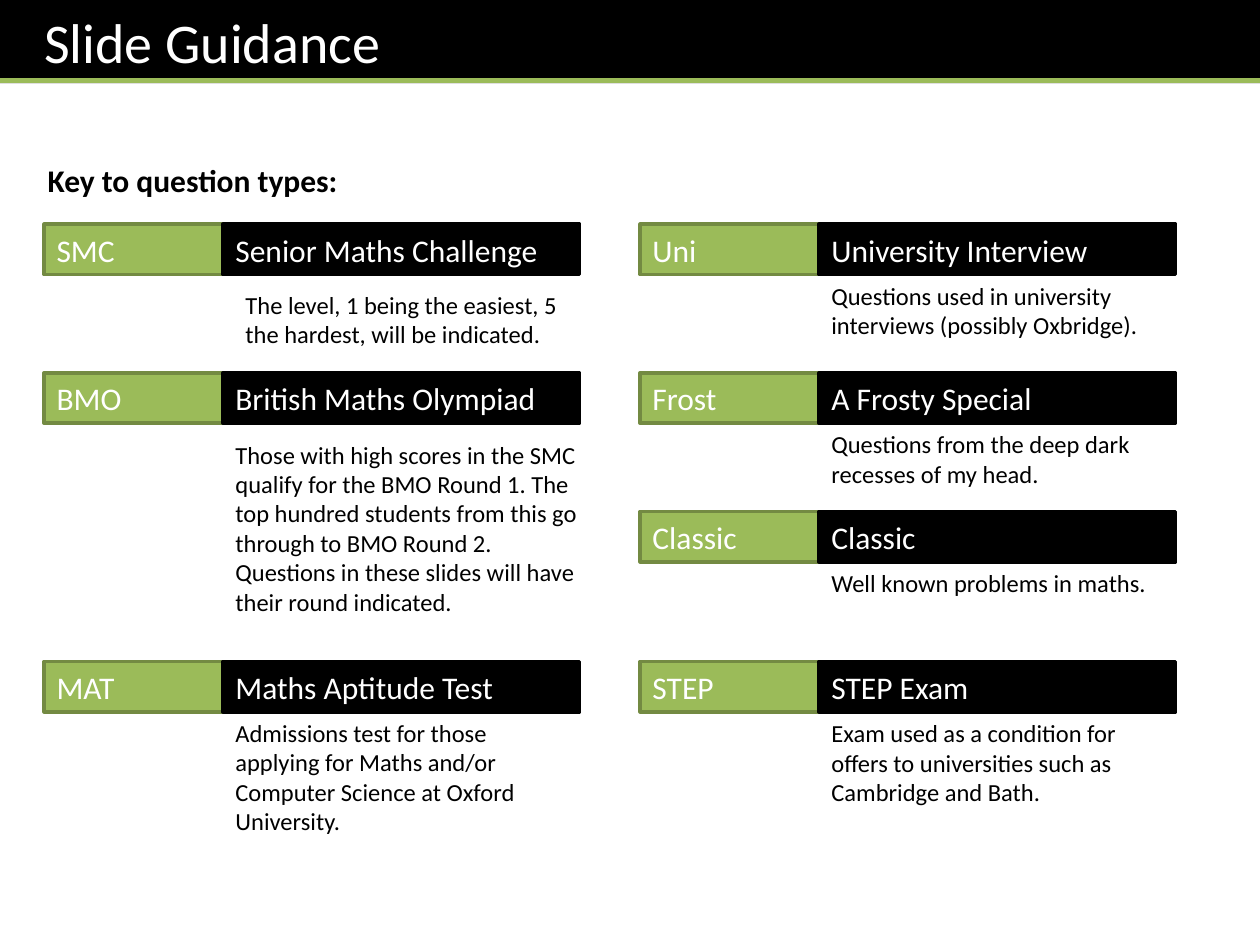
import pptx
import pptx.util
import pptx.dml.color
import pptx.enum.shapes
import pptx.enum.text
import pptx.oxml

Inches = pptx.util.Inches
Color = pptx.dml.color.RGBColor
ALIGN = pptx.enum.text.PP_ALIGN
ANCHOR = pptx.enum.text.MSO_ANCHOR
RECT = pptx.enum.shapes.MSO_SHAPE.RECTANGLE
LINE = pptx.enum.shapes.MSO_CONNECTOR.STRAIGHT

BLACK = Color(0x00, 0x00, 0x00)
WHITE = Color(0xFF, 0xFF, 0xFF)
GREEN = Color(0x9B, 0xBB, 0x59)
OLIVE = Color(0x73, 0x8A, 0x42)

TITLE = "Slide Guidance"
HEAD = "Key to question types:"
KEYS = [
    (0, 0, "SMC", "Senior Maths Challenge",
     ["The level, 1 being the easiest, 5 the hardest, will be indicated."], 2),
    (0, 1, "BMO", "British Maths Olympiad",
     ["Those with high scores in the SMC qualify for the BMO Round 1. "
      "The top hundred students from this go through to BMO Round 2.",
      "Questions in these slides will have their round indicated."], 6),
    (0, 3, "MAT", "Maths Aptitude Test",
     ["Admissions test for those applying for Maths and/or "
      "Computer Science at Oxford University."], 4),
    (1, 0, "Uni", "University Interview",
     ["Questions used in university interviews (possibly Oxbridge)."], 2),
    (1, 1, "Frost", "A Frosty Special",
     ["Questions from the deep dark recesses of my head."], 2),
    (1, 2, "Classic", "Classic", ["Well known problems in maths."], 1),
    (1, 3, "STEP", "STEP Exam",
     ["Exam used as a condition for offers to universities such as "
      "Cambridge and Bath."], 3),
]
SHIFTS = {"SMC": (0.08, 0.07, 0), "BMO": (0, 0.08, 0.15)}

WIDE, HIGH = 10, 7.5
LEFT, STEP = 0.35, 4.73
ROWS = [1.78, 2.96, 4.06, 5.25]
CODE, NAME, NOTE = 1.42, 2.83, 2.76
TALL, LEAD, PAD = 0.4, 0.235, 0.1
BAND, RULE = 0.66, 0.64

LABEL = {"size": pptx.util.Pt(18), "color": WHITE}
BODY = {"size": pptx.util.Pt(14), "color": BLACK}
STRONG = {"size": pptx.util.Pt(18), "color": BLACK, "bold": True}
LARGE = {"size": pptx.util.Pt(32), "color": WHITE}


def write(shape, texts, style, anchor):
    frame = shape.text_frame
    frame.word_wrap = True
    frame.auto_size = pptx.enum.text.MSO_AUTO_SIZE.NONE
    frame.vertical_anchor = anchor
    frame.text = "\n".join(texts)
    for para in frame.paragraphs:
        para.alignment = ALIGN.LEFT
        for run in para.runs:
            run.font.name = "Calibri"
            for key, value in style.items():
                if key == "color":
                    run.font.color.rgb = value
                else:
                    setattr(run.font, key, value)


def paint(shape, fill):
    shape.fill.solid()
    shape.fill.fore_color.rgb = fill


def bar(slide, box, text, fill, edge):
    shape = slide.shapes.add_shape(RECT, *map(Inches, box))
    shape.shadow.inherit = False
    paint(shape, fill)
    shape.line.color.rgb = edge
    shape.line.width = pptx.util.Pt(2)
    write(shape, [text], LABEL, ANCHOR.MIDDLE)


def note(slide, box, texts, style):
    shape = slide.shapes.add_textbox(*map(Inches, box))
    write(shape, texts, style, ANCHOR.TOP)


def banner(slide):
    title = slide.shapes.title
    for key, value in zip(("left", "top", "width", "height"),
                          (0, 0, WIDE, BAND)):
        setattr(title, key, Inches(value))
    paint(title, BLACK)
    write(title, [TITLE], LARGE, ANCHOR.MIDDLE)
    title.text_frame.margin_left = Inches(LEFT)
    rule = slide.shapes.add_connector(
        LINE, *map(Inches, (0, RULE, WIDE, RULE)))
    rule.line.color.rgb = GREEN
    rule.line.width = pptx.util.Pt(3)
    rule._element.spPr.append(pptx.oxml.parse_xml(
        '<a:effectLst xmlns:a='
        '"http://schemas.openxmlformats.org/drawingml/2006/main"/>'))


def main():
    deck = pptx.Presentation()
    deck.slide_width, deck.slide_height = Inches(WIDE), Inches(HIGH)
    slide = deck.slides.add_slide(deck.slide_layouts[5])
    banner(slide)
    note(slide, (0.28, 1.23, NAME, TALL), [HEAD], STRONG)
    for col, row, code, name, texts, lines in KEYS:
        left, top = LEFT + col * STEP, ROWS[row]
        mid = left + CODE
        bar(slide, (left, top, CODE, TALL), code, GREEN, OLIVE)
        bar(slide, (mid, top, NAME, TALL), name, BLACK, BLACK)
        right, down, extra = SHIFTS.get(code, (0, 0, 0))
        note(slide, (mid + right, top + TALL + down,
                     NOTE + extra, PAD + lines * LEAD), texts, BODY)
    deck.save("out.pptx")


if __name__ == "__main__":
    main()
